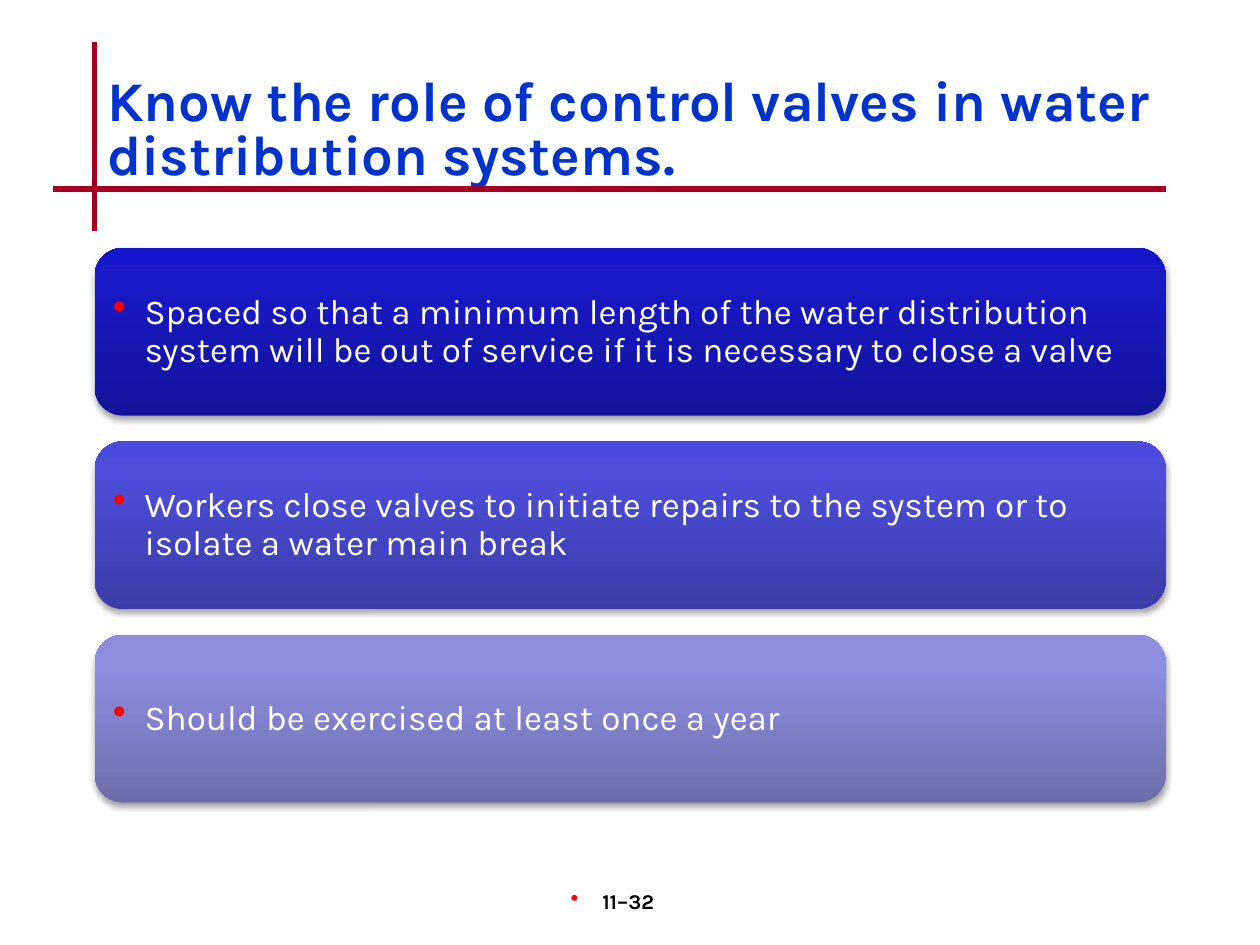
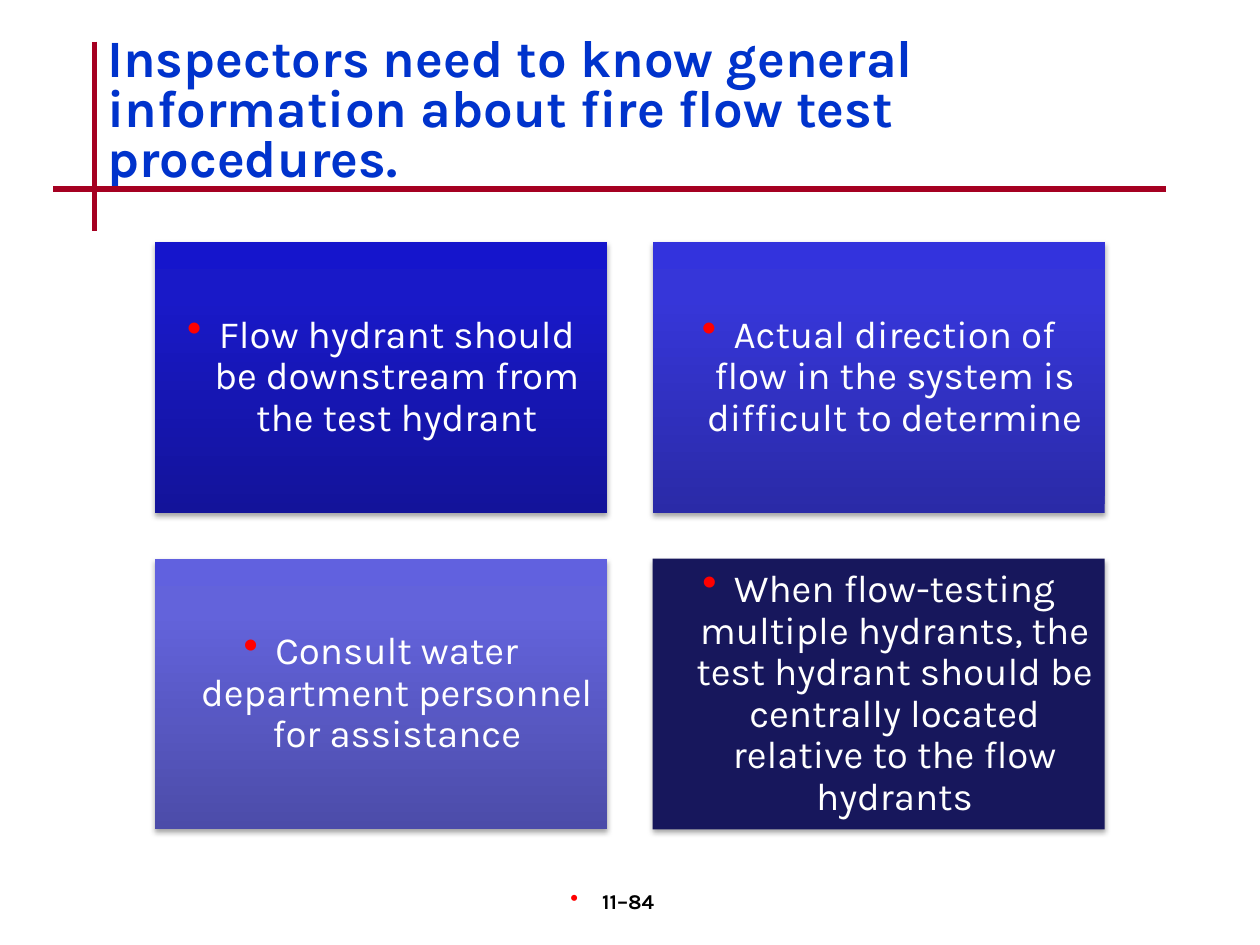
from dataclasses import dataclass

from lxml import etree
from pptx import Presentation
from pptx.dml.color import RGBColor
from pptx.enum.shapes import MSO_CONNECTOR, MSO_SHAPE
from pptx.enum.text import MSO_ANCHOR, MSO_AUTO_SIZE, PP_ALIGN
from pptx.oxml import parse_xml
from pptx.oxml.ns import nsdecls, qn
from pptx.util import Cm, Pt

FONT = "Karla"
RULE_RED = RGBColor(0xA5, 0x00, 0x21)
TITLE_BLUE = RGBColor(0x00, 0x33, 0xCC)
BULLET_RED = RGBColor(0xFF, 0x00, 0x00)
WHITE = RGBColor(0xFF, 0xFF, 0xFF)
BLACK = RGBColor(0x00, 0x00, 0x00)
NAVY = RGBColor(0x17, 0x17, 0x5C)


def shades(*hex_colors):
    return tuple(RGBColor.from_string(color) for color in hex_colors)


# Card gradients, from the bottom edge to the top edge
STOPS = (0, 80, 100)
DEEP = shades("13139A", "1919C8", "1515CC")
STRONG = shades("2A2AA7", "3636D9", "3333DD")
MEDIUM = shades("3B3BA8", "4D4DDA", "4A4ADE")
SOFT = shades("4C4CA9", "6363DB", "6161DF")
PALE = shades("6D6DAC", "8D8DE0", "8C8CE2")
SOLID_NAVY = (NAVY,)


@dataclass
class Box:
    """A region in centimetres."""
    left: float
    top: float
    width: float
    height: float

    def lengths(self):
        return Cm(self.left), Cm(self.top), Cm(self.width), Cm(self.height)


@dataclass
class CardStyle:
    outline: MSO_SHAPE
    size: int
    align: PP_ALIGN
    inset: float
    columns: int
    gap: float


ROW_STYLE = CardStyle(MSO_SHAPE.ROUNDED_RECTANGLE, 20, PP_ALIGN.LEFT, 0.2, 1, 0.52)
TILE_STYLE = CardStyle(MSO_SHAPE.RECTANGLE, 22, PP_ALIGN.CENTER, 0.23, 2, 0.92)
PAGE_BOX = Box(9.96, 17.78, 5.28, 1.27)


# Text and shape helpers
def add_bullet(paragraph):
    properties = paragraph._p.get_or_add_pPr()
    properties.set("marL", str(Cm(0.64)))
    properties.set("indent", str(-Cm(0.64)))
    for xml in (
        f'<a:buClr {nsdecls("a")}><a:srgbClr val="{BULLET_RED}"/></a:buClr>',
        f'<a:buSzPct {nsdecls("a")} val="110000"/>',
        f'<a:buChar {nsdecls("a")} char="•"/>',
    ):
        properties.append(parse_xml(xml))


def style_paragraph(paragraph, size, color, align, bold=False, spacing=None):
    paragraph.alignment = align
    paragraph.line_spacing = spacing
    font = paragraph.font
    font.name, font.size, font.bold = FONT, Pt(size), bold
    font.color.rgb = color


def fill_card(card, colors):
    if len(colors) == 1:
        card.fill.solid()
        card.fill.fore_color.rgb = colors[0]
        return
    stops = "".join(
        f'<a:gs pos="{stop * 1000}"><a:srgbClr val="{color}"/></a:gs>'
        for stop, color in zip(STOPS, colors)
    )
    gradient = parse_xml(
        f'<a:gradFill {nsdecls("a")} rotWithShape="1"><a:gsLst>{stops}</a:gsLst>'
        '<a:lin ang="16200000" scaled="0"/></a:gradFill>'
    )
    card._element.spPr.find(qn("a:prstGeom")).addnext(gradient)


def add_soft_shadow(card):
    card.shadow.inherit = False
    effects = card._element.spPr.find(qn("a:effectLst"))
    effects.append(parse_xml(
        f'<a:outerShdw {nsdecls("a")} blurRad="{Pt(3.1)}" dist="{Pt(1.8)}" '
        'dir="5400000" rotWithShape="0"><a:srgbClr val="000000">'
        '<a:alpha val="35000"/></a:srgbClr></a:outerShdw>'
    ))


# Frame shared by all slides
def add_rules(slide):
    for ends in ((1.91, 0.84, 1.91, 4.65), (1.07, 3.81, 23.5, 3.81)):
        rule = slide.shapes.add_connector(MSO_CONNECTOR.STRAIGHT, *map(Cm, ends))
        rule.line.color.rgb = RULE_RED
        rule.line.width = Pt(3)
        etree.SubElement(rule._element.spPr, qn("a:effectLst"))


def set_title(slide, text, box, size):
    title = slide.shapes.title
    title.left, title.top, title.width, title.height = box.lengths()
    frame = title.text_frame
    frame.text = text
    frame.word_wrap = True
    frame.auto_size = MSO_AUTO_SIZE.NONE
    frame.vertical_anchor = MSO_ANCHOR.TOP
    frame.margin_left, frame.margin_right = Cm(0.25), Cm(0.15)
    frame.margin_top = Cm(0.23)
    style_paragraph(frame.paragraphs[0], size, TITLE_BLUE, PP_ALIGN.LEFT, True, 0.8)


def add_page_number(slide, text, box):
    frame = slide.shapes.add_textbox(*box.lengths()).text_frame
    frame.word_wrap = True
    frame.margin_right = Cm(0.76)
    frame.text = text
    add_bullet(frame.paragraphs[0])
    style_paragraph(frame.paragraphs[0], 12, BLACK, PP_ALIGN.CENTER, True)


# Content cards
def add_card(slide, text, colors, box, style):
    card = slide.shapes.add_shape(style.outline, *box.lengths())
    fill_card(card, colors)
    card.line.fill.background()
    add_soft_shadow(card)
    frame = card.text_frame
    frame.text = text
    frame.word_wrap = True
    frame.vertical_anchor = MSO_ANCHOR.MIDDLE
    frame.margin_left = frame.margin_right = Cm(style.inset)
    frame.margin_top = frame.margin_bottom = Cm(style.inset)
    add_bullet(frame.paragraphs[0])
    style_paragraph(frame.paragraphs[0], style.size, WHITE, style.align, spacing=0.9)


def add_card_grid(slide, cards, box, style):
    columns, gap = style.columns, style.gap
    rows = -(-len(cards) // columns)
    width = (box.width - gap * (columns - 1)) / columns
    height = (box.height - gap * (rows - 1)) / rows
    for index, (text, colors) in enumerate(cards):
        row, column = divmod(index, columns)
        cell = Box(box.left + column * (width + gap),
                   box.top + row * (height + gap), width, height)
        add_card(slide, text, colors, cell, style)


def add_card_slide(deck, title, title_top, title_size, page, cards, box, style):
    slide = deck.slides.add_slide(deck.slide_layouts.get_by_name("Title Only"))
    add_rules(slide)
    set_title(slide, title, Box(1.91, title_top, 21.59, 2.54), title_size)
    add_page_number(slide, page, PAGE_BOX)
    add_card_grid(slide, cards, box, style)


def main():
    deck = Presentation()
    deck.slide_width, deck.slide_height = Cm(25.4), Cm(19.05)

    add_card_slide(
        deck, "Know the role of control valves in water distribution systems.",
        1.35, 32, "11–32",
        [
            ("Spaced so that a minimum length of the water distribution system "
             "will be out of service if it is necessary to close a valve", DEEP),
            ("Workers close valves to initiate repairs to the system or to "
             "isolate a water main break", MEDIUM),
            ("Should be exercised at least once a year", PALE),
        ],
        Box(1.91, 5, 21.59, 11.18), ROW_STYLE)

    add_card_slide(
        deck, "Inspectors need to know general information about fire flow test "
              "procedures.",
        0.51, 30, "11–84",
        [
            ("Flow hydrant should be downstream from the test hydrant", DEEP),
            ("Actual direction of flow in the system is difficult to determine",
             STRONG),
            ("Consult water department personnel for assistance", SOFT),
            ("When flow-testing multiple hydrants, the test hydrant should be "
             "centrally located relative to the flow hydrants", SOLID_NAVY),
        ],
        Box(3.12, 4.88, 19.15, 11.84), TILE_STYLE)

    deck.save("out.pptx")


if __name__ == "__main__":
    main()
